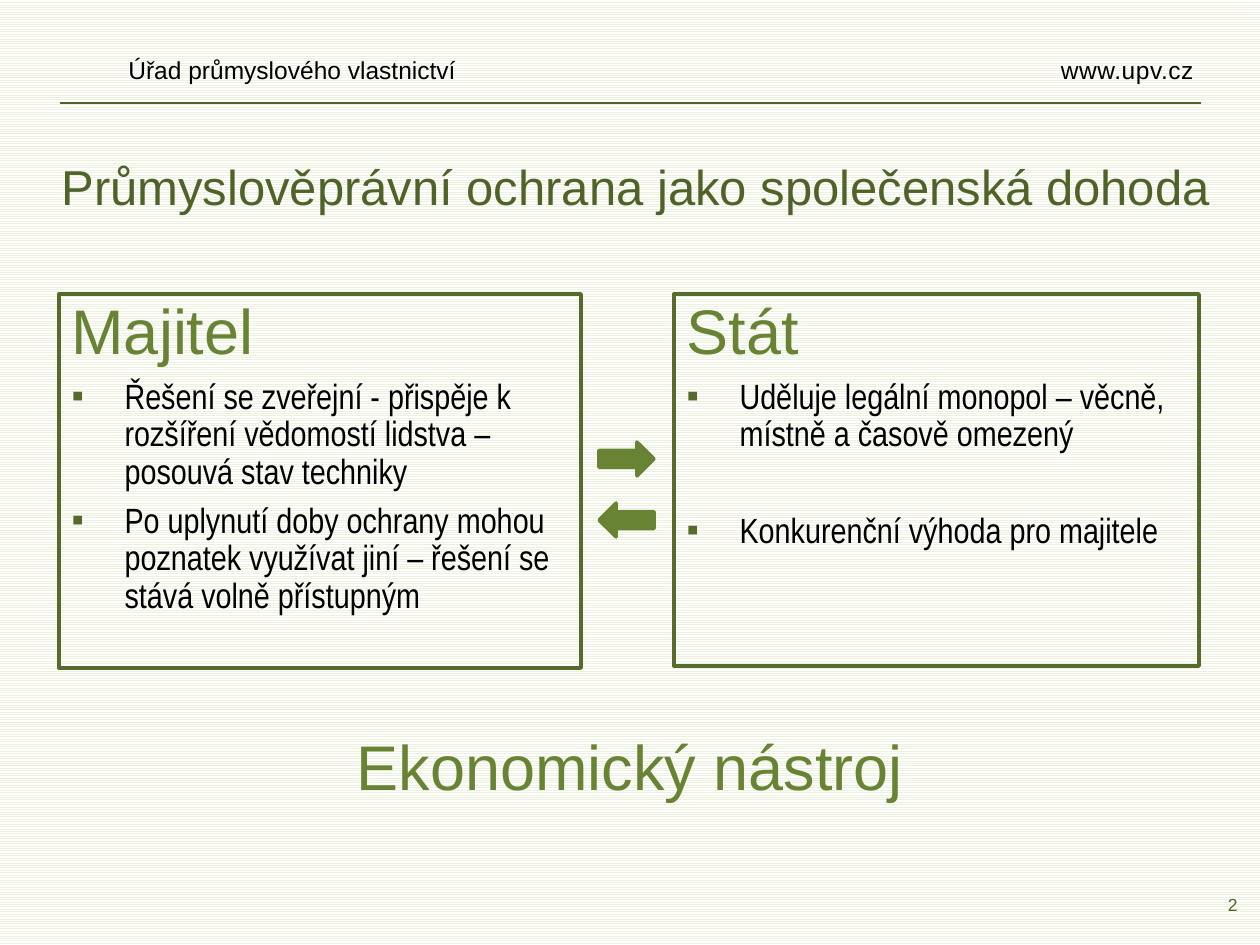
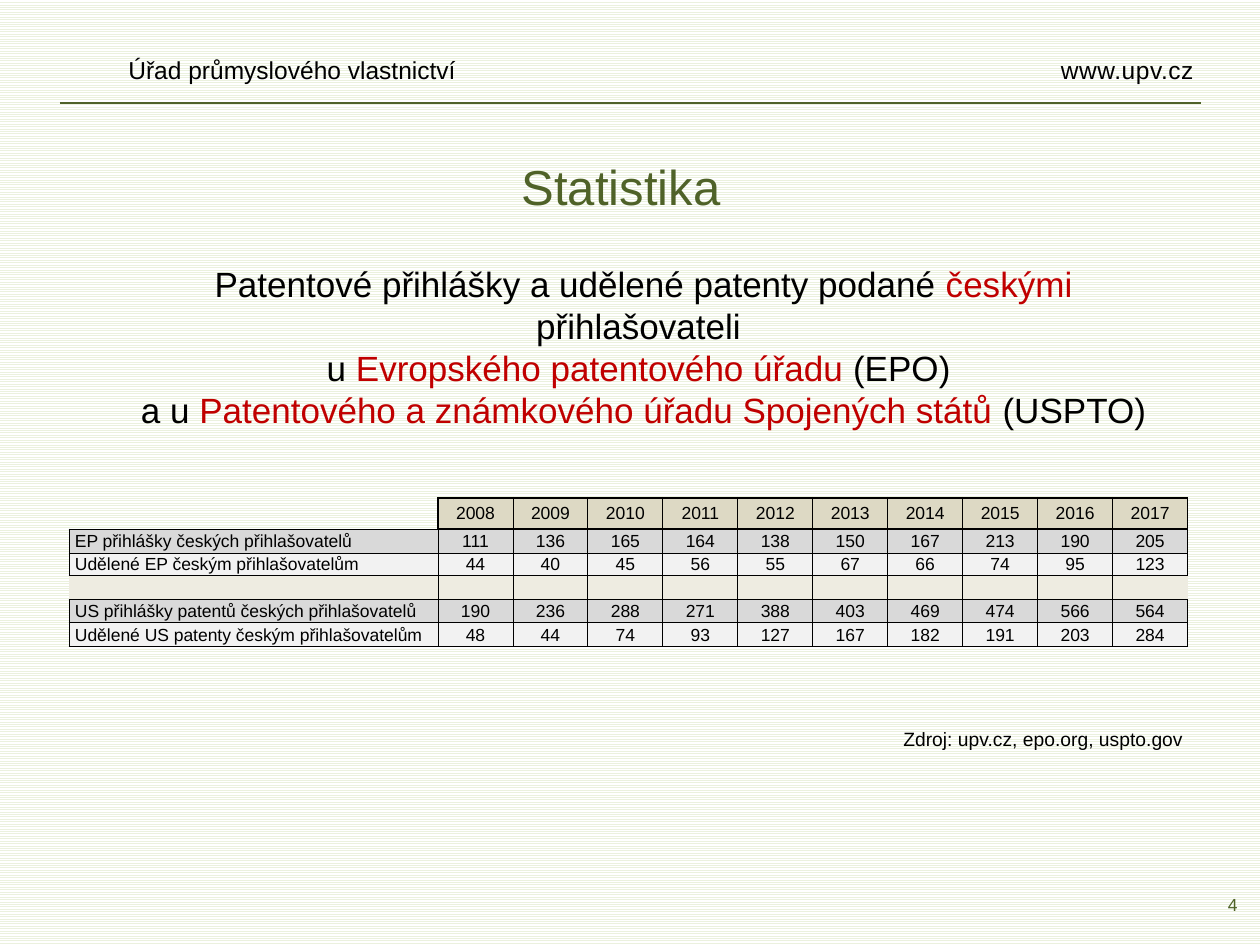
from typing import NamedTuple

from lxml.etree import SubElement
from pptx import Presentation
from pptx.dml.color import RGBColor
from pptx.enum.dml import MSO_PATTERN
from pptx.enum.shapes import MSO_CONNECTOR, MSO_SHAPE
from pptx.enum.text import MSO_ANCHOR, MSO_AUTO_SIZE, PP_ALIGN
from pptx.oxml.ns import qn
from pptx.util import Emu, Pt

PX_PER_INCH = 126
SLIDE_SIZE = (1260, 945)

BLACK = RGBColor(0x00, 0x00, 0x00)
WHITE = RGBColor(0xFF, 0xFF, 0xFF)
PALE_GREEN = RGBColor(0xEB, 0xF1, 0xDE)
DARK_GREEN = RGBColor(0x4F, 0x62, 0x28)
FRAME_GREEN = RGBColor(0x56, 0x6B, 0x2B)
GREEN = RGBColor(0x69, 0x83, 0x35)
RED = RGBColor(0xC0, 0x00, 0x00)
BEIGE = RGBColor(0xDD, 0xD9, 0xC4)
LIGHT_BEIGE = RGBColor(0xEE, 0xEC, 0xE1)
GREY = RGBColor(0xD9, 0xD9, 0xD9)
LIGHT_GREY = RGBColor(0xF2, 0xF2, 0xF2)

TWO_CONTENT_LAYOUT, TITLE_ONLY_LAYOUT = 3, 5
BULLET_INDENT = 53


class Box(NamedTuple):
    left: int
    top: int
    width: int
    height: int


class Bullet(NamedTuple):
    text: str
    space_before: float = 6


class Party(NamedTuple):
    name: str
    box: Box
    bullets: tuple[Bullet, ...]


class TableRow(NamedTuple):
    label: str
    values: tuple
    fill: RGBColor
    height: int


PARTIES = (
    Party("Majitel", Box(59, 294, 522, 374), (
        Bullet("Řešení se zveřejní - přispěje k rozšíření vědomostí lidstva – posouvá stav techniky"),
        Bullet("Po uplynutí doby ochrany mohou poznatek využívat jiní – řešení se stává volně přístupným"),
    )),
    Party("Stát", Box(674, 294, 525, 372), (
        Bullet("Uděluje legální monopol – věcně, místně a časově omezený"),
        Bullet("Konkurenční výhoda pro majitele", space_before=33.5),
    )),
)

YEARS = tuple(range(2008, 2018))
TABLE_ROWS = (
    TableRow("", YEARS, BEIGE, 31),
    TableRow("EP přihlášky českých přihlašovatelů",
             (111, 136, 165, 164, 138, 150, 167, 213, 190, 205), GREY, 24),
    TableRow("Udělené EP českým přihlašovatelům",
             (44, 40, 45, 56, 55, 67, 66, 74, 95, 123), LIGHT_GREY, 23),
    TableRow("", ("",) * len(YEARS), LIGHT_BEIGE, 24),
    TableRow("US přihlášky patentů českých přihlašovatelů",
             (190, 236, 288, 271, 388, 403, 469, 474, 566, 564), GREY, 23),
    TableRow("Udělené US patenty českým přihlašovatelům",
             (48, 44, 74, 93, 127, 167, 182, 191, 203, 284), LIGHT_GREY, 24),
)
HEADER_ROW, GAP_ROW = 0, 3
LABEL_WIDTH, YEAR_WIDTH = 369, 75


def px(length: int) -> Emu:
    return Emu(round(length * 914400 / PX_PER_INCH))


def place(shape, box: Box) -> None:
    shape.left, shape.top, shape.width, shape.height = map(px, box)


def write(paragraph, text: str, size: float = 14, color: RGBColor = BLACK, font: str = "Arial",
          align=None, tracking: int = 0) -> None:
    """Append text to a paragraph; a newline becomes a line break."""
    if align is not None:
        paragraph.alignment = align
    if not text:
        SubElement(paragraph._p, qn("a:endParaRPr"), sz=str(size * 100))
        return
    for number, line in enumerate(text.split("\n")):
        if number:
            paragraph.add_line_break()
        run = paragraph.add_run()
        run.text = line
        run.font.size = Pt(size)
        run.font.name = font
        run.font.color.rgb = color
        if tracking:
            run._r.get_or_add_rPr().set("spc", str(tracking))


def add_text(slide, box: Box, text: str = "", wrap: bool = True, anchor=MSO_ANCHOR.TOP, **text_format):
    """Add a text box and return its first paragraph."""
    frame = slide.shapes.add_textbox(*map(px, box)).text_frame
    frame.word_wrap = wrap
    frame.vertical_anchor = anchor
    paragraph = frame.paragraphs[0]
    if text:
        write(paragraph, text, **text_format)
    return paragraph


def add_slide(presentation, layout: int, title: str, title_box: Box, number: int):
    """Add a slide with its title, header band and page number."""
    slide = presentation.slides.add_slide(presentation.slide_layouts[layout])
    add_text(slide, Box(988, 888, 262, 32), str(number), anchor=MSO_ANCHOR.MIDDLE,
             size=10, color=DARK_GREEN, align=PP_ALIGN.RIGHT)
    add_text(slide, Box(116, 49, 563, 43), "Úřad průmyslového vlastnictví")
    add_text(slide, Box(1008, 49, 198, 43), "www.upv.cz", align=PP_ALIGN.RIGHT, tracking=30)

    rule = slide.shapes.add_connector(MSO_CONNECTOR.STRAIGHT, px(60), px(103), px(1201), px(103))
    rule.line.color.rgb = DARK_GREEN
    rule.line.width = Pt(1)
    SubElement(rule._element.spPr, qn("a:effectLst"))

    heading = slide.shapes.title
    place(heading, title_box)
    heading.text_frame.auto_size = MSO_AUTO_SIZE.NONE
    heading.text_frame.vertical_anchor = MSO_ANCHOR.TOP
    write(heading.text_frame.paragraphs[0], title, size=28, color=DARK_GREEN, align=PP_ALIGN.CENTER)
    return slide


def set_bullet(paragraph, bulleted: bool) -> None:
    properties = paragraph._p.get_or_add_pPr()
    indent = px(BULLET_INDENT) if bulleted else 0
    properties.set("marL", str(indent))
    properties.set("indent", str(-indent))
    if not bulleted:
        SubElement(properties, qn("a:buNone"))
        return
    color = SubElement(properties, qn("a:buClr"))
    SubElement(color, qn("a:srgbClr"), val=str(FRAME_GREEN))
    SubElement(properties, qn("a:buFont"), typeface="Arial")
    SubElement(properties, qn("a:buChar"), char="▪")


def fill_party(placeholder, party: Party) -> None:
    place(placeholder, party.box)
    placeholder.line.color.rgb = FRAME_GREEN
    placeholder.line.width = Pt(2.25)
    frame = placeholder.text_frame
    frame.auto_size = MSO_AUTO_SIZE.NONE
    name = frame.paragraphs[0]
    set_bullet(name, False)
    name.line_spacing = 0.9
    name.space_before = Pt(0)
    write(name, party.name, size=36, color=GREEN)
    for bullet in party.bullets:
        paragraph = frame.add_paragraph()
        set_bullet(paragraph, True)
        paragraph.line_spacing = 0.9
        paragraph.space_before = Pt(bullet.space_before)
        write(paragraph, bullet.text, size=20, font="Arial Narrow")


def add_arrow(slide, top: int, rotation: int) -> None:
    arrow = slide.shapes.add_shape(MSO_SHAPE.RIGHT_ARROW, *map(px, Box(599, top, 55, 34)))
    arrow.rotation = rotation
    arrow.shadow.inherit = False
    arrow.fill.solid()
    arrow.fill.fore_color.rgb = GREEN
    arrow.line.color.rgb = GREEN
    arrow.line.width = Pt(2)


def vertical_border(row: int, edge: int) -> float:
    """Width in points of the border on the left of column number edge."""
    last = len(YEARS) + 1
    if row == HEADER_ROW:
        return {0: 0, 1: 1, last: 1}.get(edge, 0.5)
    if row == GAP_ROW:
        return {0: 0, last - 1: 0.25, last: 0}.get(edge, 0.5)
    return 0.5


def horizontal_border(edge: int, column: int) -> float:
    """Width in points of the border above row number edge."""
    if column == 0:
        return 0.5 if edge else 0
    return {0: 1.5, 1: 1}.get(edge, 0.5)


def set_borders(cell, row: int, column: int) -> None:
    widths = {
        "a:lnL": vertical_border(row, column),
        "a:lnR": vertical_border(row, column + 1),
        "a:lnT": horizontal_border(row, column),
        "a:lnB": horizontal_border(row + 1, column),
    }
    properties = cell._tc.get_or_add_tcPr()
    for tag, width in widths.items():
        line = SubElement(properties, qn(tag), w=str(Pt(width)))
        if width:
            fill = SubElement(line, qn("a:solidFill"))
            SubElement(fill, qn("a:srgbClr"), val=str(BLACK))
        else:
            SubElement(line, qn("a:noFill"))


def add_patent_table(slide) -> None:
    box = Box(69, 498, LABEL_WIDTH + YEAR_WIDTH * len(YEARS), sum(row.height for row in TABLE_ROWS))
    table = slide.shapes.add_table(len(TABLE_ROWS), len(YEARS) + 1, *map(px, box)).table
    table.first_row = table.horz_banding = False
    for index, column in enumerate(table.columns):
        column.width = px(YEAR_WIDTH if index else LABEL_WIDTH)
    for row_index, row in enumerate(TABLE_ROWS):
        table.rows[row_index].height = px(row.height)
        for column_index, value in enumerate((row.label, *row.values)):
            cell = table.cell(row_index, column_index)
            set_borders(cell, row_index, column_index)
            if row_index == HEADER_ROW and column_index == 0:
                cell.fill.background()
            else:
                cell.fill.solid()
                cell.fill.fore_color.rgb = row.fill
            cell.margin_left = px(1 if column_index else 6)
            cell.margin_top = cell.margin_right = px(1)
            cell.margin_bottom = 0
            cell.vertical_anchor = MSO_ANCHOR.MIDDLE
            write(cell.text_frame.paragraphs[0], str(value), size=10,
                  align=PP_ALIGN.CENTER if column_index else PP_ALIGN.LEFT)


def add_agreement_slide(presentation) -> None:
    slide = add_slide(presentation, TWO_CONTENT_LAYOUT,
                      "Průmyslověprávní ochrana jako společenská dohoda", Box(34, 150, 1203, 74), 2)
    for index, party in enumerate(PARTIES, start=1):
        fill_party(slide.placeholders[index], party)
    add_arrow(slide, 442, rotation=0)
    add_arrow(slide, 503, rotation=180)
    add_text(slide, Box(59, 721, 1142, 74), "Ekonomický nástroj",
             size=36, color=GREEN, align=PP_ALIGN.CENTER)


def add_statistics_slide(presentation) -> None:
    slide = add_slide(presentation, TITLE_ONLY_LAYOUT, "Statistika", Box(49, 150, 1144, 74), 4)
    subject = add_text(slide, Box(110, 256, 1067, 183))
    for text, color in (
        ("Patentové přihlášky a udělené patenty podané ", BLACK),
        ("českými ", RED),
        ("přihlašovateli \nu ", BLACK),
        ("Evropského patentového úřadu", RED),
        (" (EPO) \na u ", BLACK),
        ("Patentového a známkového úřadu Spojených států", RED),
        (" (USPTO)", BLACK),
    ):
        write(subject, text, size=20, color=color, align=PP_ALIGN.CENTER)
    add_patent_table(slide)
    add_text(slide, Box(891, 721, 312, 37), "Zdroj: upv.cz, epo.org, uspto.gov", wrap=False, size=11)


def main() -> None:
    presentation = Presentation()
    presentation.slide_width, presentation.slide_height = map(px, SLIDE_SIZE)
    background = presentation.slide_master.background.fill
    background.patterned()
    background.pattern = MSO_PATTERN.NARROW_HORIZONTAL
    background.fore_color.rgb = PALE_GREEN
    background.back_color.rgb = WHITE
    add_agreement_slide(presentation)
    add_statistics_slide(presentation)
    presentation.save("out.pptx")


if __name__ == "__main__":
    main()
